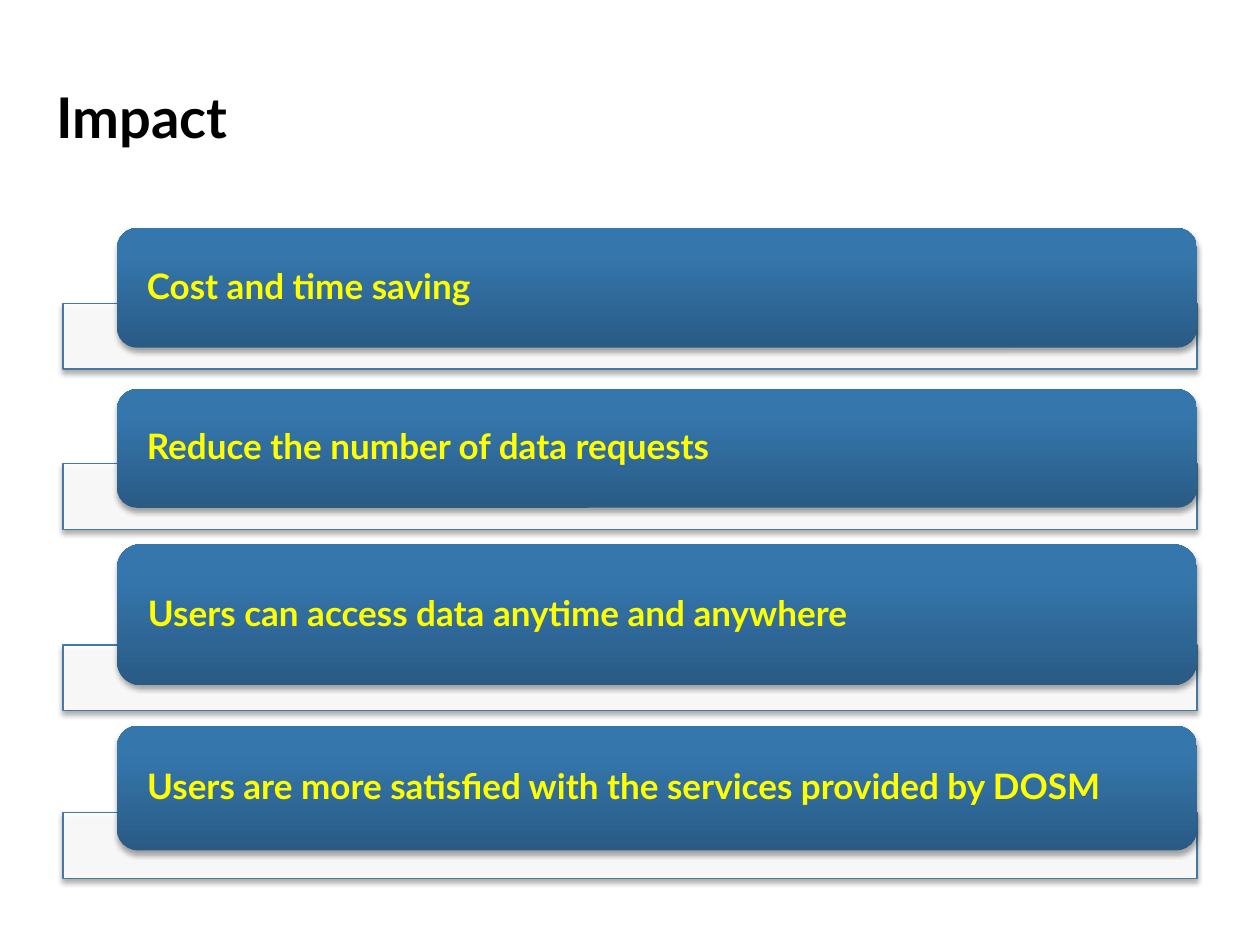
from copy import deepcopy

from lxml import etree
from pptx import Presentation
from pptx.dml.color import RGBColor
from pptx.enum import shapes, text
from pptx.oxml import ns
from pptx.util import Inches, Pt

BLACK = RGBColor(0x00, 0x00, 0x00)
WHITE = RGBColor(0xFF, 0xFF, 0xFF)
YELLOW = RGBColor(0xFF, 0xFF, 0x00)
OUTLINE = RGBColor(0x45, 0x79, 0xA4)
GRADIENT = [
    (0, RGBColor(0x29, 0x5B, 0x85)),
    (0.8, RGBColor(0x35, 0x77, 0xAD)),
    (1, RGBColor(0x33, 0x77, 0xB0)),
]
FONT = "Lato"
INDENT, BAR_H = 0.43, 0.52

# Text, card top, card height, bar top (inches)
IMPACTS = [
    ("Cost and time saving", 1.81, 0.95, 2.41),
    ("Reduce the number of data requests", 3.09, 0.94, 3.68),
    ("Users can access data anytime and anywhere", 4.32, 1.12, 5.12),
    ("Users are more satisfied with the services provided by DOSM", 5.76, 0.99, 6.45),
]


def sub(parent, tag, **attrs):
    return etree.SubElement(parent, ns.qn(tag), attrs)


def set_text(sp, content, *, size, color, align, inset, line_spacing=1.0):
    tf = sp.text_frame
    tf.word_wrap = True
    tf.vertical_anchor = text.MSO_ANCHOR.MIDDLE
    tf.margin_left = tf.margin_right = Inches(inset)
    tf.margin_top = tf.margin_bottom = 0
    p = tf.paragraphs[0]
    p.alignment = align
    p.line_spacing = line_spacing
    r = p.add_run()
    r.text = content
    r.font.name, r.font.size, r.font.bold = FONT, Pt(size), True
    r.font.color.rgb = color


def add_shadowed(s, kind, x, y, w, h):
    """Add a shape with a soft shadow straight below it."""
    sp = s.shapes.add_shape(kind, Inches(x), Inches(y), Inches(w), Inches(h))
    sp.shadow.inherit = False
    effects = sp._element.spPr.find(ns.qn("a:effectLst"))
    shadow = sub(effects, "a:outerShdw", blurRad=str(Pt(3.1)), dist=str(Pt(1.8)),
                 dir="5400000", rotWithShape="0")
    sub(sub(shadow, "a:srgbClr", val="000000"), "a:alpha", val="35000")
    return sp


def fill_gradient(sp):
    sp.fill.gradient()
    sp.fill.gradient_angle = 90
    stops = sp._element.spPr.find(ns.qn("a:gradFill")).find(ns.qn("a:gsLst"))
    stops.append(deepcopy(stops[0]))
    for stop, (position, color) in zip(sp.fill.gradient_stops, GRADIENT):
        stop.position = position
        stop.color.rgb = color


def add_title(s, x, y, w, h):
    box = s.shapes.add_textbox(Inches(x), Inches(y), Inches(w), Inches(h))
    set_text(box, "Impact", size=32, color=BLACK,
             align=text.PP_ALIGN.JUSTIFY, inset=0.1)


def add_bar(s, x, y, w, h):
    bar = add_shadowed(s, shapes.MSO_SHAPE.RECTANGLE, x, y, w, h)
    bar.fill.solid()
    bar.fill.fore_color.rgb = WHITE
    color = bar._element.spPr.find(ns.qn("a:solidFill"))[0]
    sub(color, "a:alpha", val="90000")
    bar.line.color.rgb = OUTLINE
    bar.line.width = Pt(0.75)


def add_card(s, content, x, y, w, h):
    card = add_shadowed(s, shapes.MSO_SHAPE.ROUNDED_RECTANGLE, x, y, w, h)
    fill_gradient(card)
    card.line.fill.background()
    set_text(card, content, size=20, color=YELLOW, align=text.PP_ALIGN.LEFT,
             inset=0.19, line_spacing=0.9)


def add_impacts(s, x, w):
    for content, card_y, card_h, bar_y in IMPACTS:
        add_bar(s, x, bar_y, w, BAR_H)
        add_card(s, content, x + INDENT, card_y, w - INDENT, card_h)


def main():
    prs = Presentation()
    prs.slide_width, prs.slide_height = Inches(10), Inches(7.5)
    s = prs.slides.add_slide(prs.slide_layouts[6])
    add_title(s, 0.35, 0.3, 9.15, 1.25)
    add_impacts(s, 0.5, 9)
    prs.save("out.pptx")


if __name__ == "__main__":
    main()
